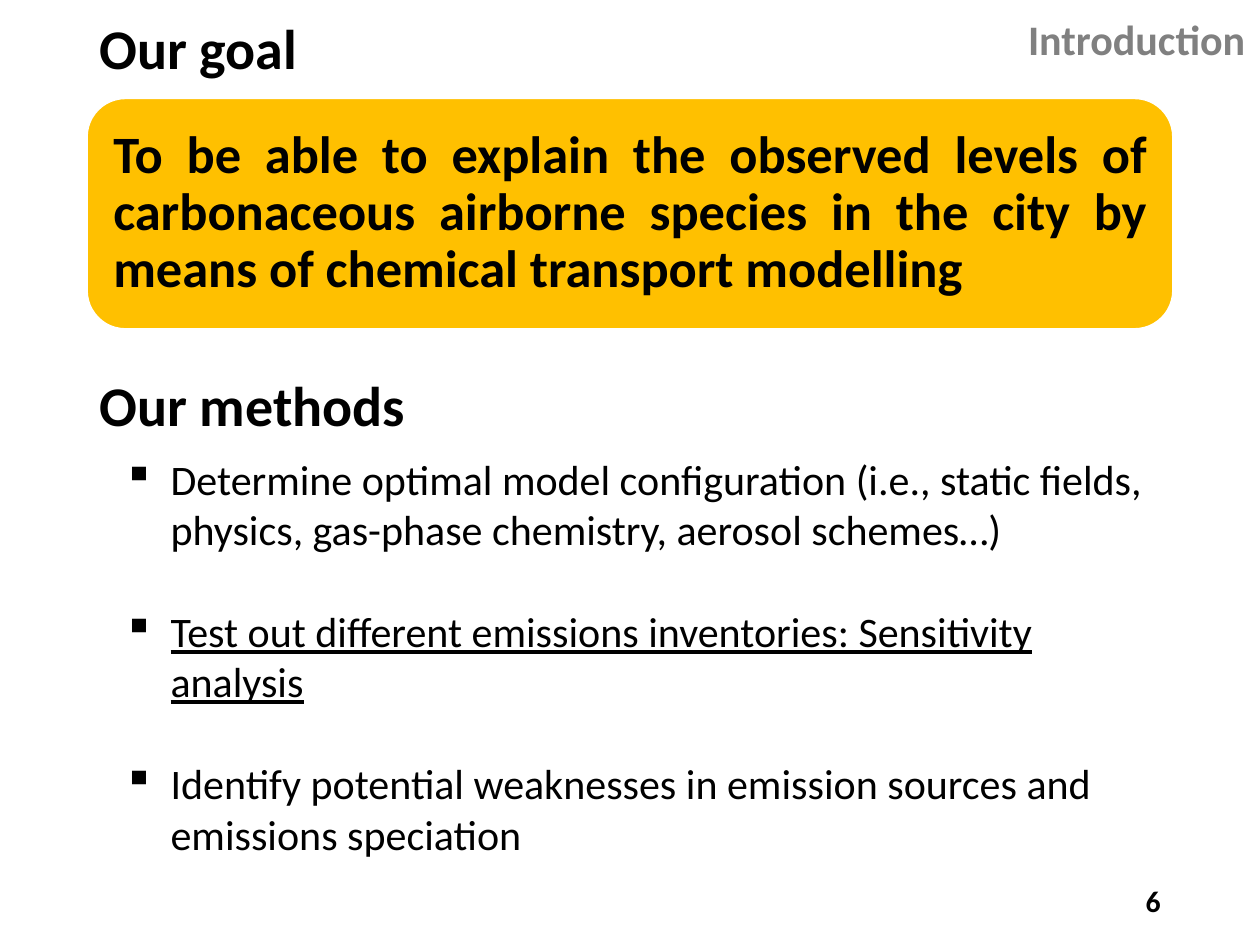
from dataclasses import dataclass, field

import pptx
import pptx.dml.color
import pptx.enum.shapes
import pptx.enum.text
import pptx.oxml
import pptx.util
from pptx.oxml.ns import qn

Pt = pptx.util.Pt
Align = pptx.enum.text.PP_ALIGN
Anchor = pptx.enum.text.MSO_ANCHOR

BLACK = pptx.dml.color.RGBColor(0x00, 0x00, 0x00)
WHITE = pptx.dml.color.RGBColor(0xFF, 0xFF, 0xFF)
GRAY = pptx.dml.color.RGBColor(0x80, 0x80, 0x80)
GOLD = pptx.dml.color.RGBColor(0xFF, 0xC0, 0x00)

LEFT, WIDE, HEAD = 49.7, 620.6, 59
HANG = 27
GAP = 29.3  # one line of 24 pt text


@dataclass
class Label:
    text: str
    box: tuple[float, float, float, float]
    size: float
    color: pptx.dml.color.RGBColor = BLACK
    para: dict = field(default_factory=dict)
    frame: dict = field(default_factory=dict)


@dataclass
class Step:
    text: str
    line: bool = False


MID = {"vertical_anchor": Anchor.MIDDLE}
INSET = {f"margin_{side}": Pt(8.5) for side in ("left", "top", "right", "bottom")}
TIGHT = {"line_spacing": 0.9}

LABELS = [
    Label("Our goal", (LEFT, 0, WIDE, HEAD), 32, para=TIGHT, frame=MID),
    Label("Introduction", (574.6, 4.3, 149.8, 36), 24, GRAY,
          {"alignment": Align.CENTER}),
    Label("Our methods", (LEFT, 203.8, WIDE, HEAD), 32, para=TIGHT, frame=MID),
    Label("To be able to explain the observed levels of carbonaceous airborne "
          "species in the city by means of chemical transport modelling",
          (56.2, 62.6, 608.4, 118.8), 30,
          para=TIGHT | {"alignment": Align.JUSTIFY}, frame=MID | INSET),
    Label("6", (508.3, 500.4, 162, 28.8), 17,
          para={"alignment": Align.RIGHT}, frame=MID),
]

STEPS = [
    Step("Determine optimal model configuration (i.e., static fields, "
         "physics, gas-phase chemistry, aerosol schemes…)"),
    Step("Test out different emissions inventories: Sensitivity analysis", True),
    Step("Identify potential weaknesses in emission sources and "
         "emissions speciation"),
]


def assign(item, values: dict) -> None:
    for name, value in values.items():
        setattr(item, name, value)


def add_frame(slide, box: tuple, values: dict):
    frame = slide.shapes.add_textbox(*map(Pt, box)).text_frame
    assign(frame, {"word_wrap": True} | values)
    return frame


def add_run(para, text: str, color, values: dict) -> None:
    run = para.add_run()
    run.text = text
    assign(run.font, {"name": "Calibri"} | values)
    run.font.color.rgb = color


def add_label(slide, label: Label) -> None:
    para = add_frame(slide, label.box, label.frame).paragraphs[0]
    assign(para, label.para)
    add_run(para, label.text, label.color, {"size": Pt(label.size), "bold": True})


def add_panel(slide) -> None:
    kind = pptx.enum.shapes.MSO_SHAPE.ROUNDED_RECTANGLE
    panel = slide.shapes.add_shape(kind, *map(Pt, (LEFT, 56.2, WIDE, 131.8)))
    panel.shadow.inherit = False
    panel.fill.solid()
    panel.fill.fore_color.rgb = GOLD
    panel.line.color.rgb = WHITE
    panel.line.width = Pt(1)


def add_bullet(para) -> None:
    props = para._p.get_or_add_pPr()
    props.set("marL", str(Pt(HANG)))
    props.set("indent", str(-Pt(HANG)))
    mark = pptx.oxml.xmlchemy.OxmlElement("a:buChar")
    mark.set("char", "▪")
    props.append(mark)


def add_steps(slide) -> None:
    frame = add_frame(slide, (63.4, 255.6, 607.7, 239.8), {})
    for i, step in enumerate(STEPS):
        para = frame.add_paragraph() if i else frame.paragraphs[0]
        para.space_before = Pt(GAP if i else 0)
        add_bullet(para)
        add_run(para, step.text, BLACK, {"size": Pt(24), "underline": step.line})


def main() -> None:
    deck = pptx.Presentation()
    assign(deck, {"slide_width": Pt(720), "slide_height": Pt(540)})
    slide = deck.slides.add_slide(deck.slide_layouts[6])
    add_panel(slide)
    for label in LABELS:
        add_label(slide, label)
    add_steps(slide)
    deck.save("out.pptx")


if __name__ == "__main__":
    main()
